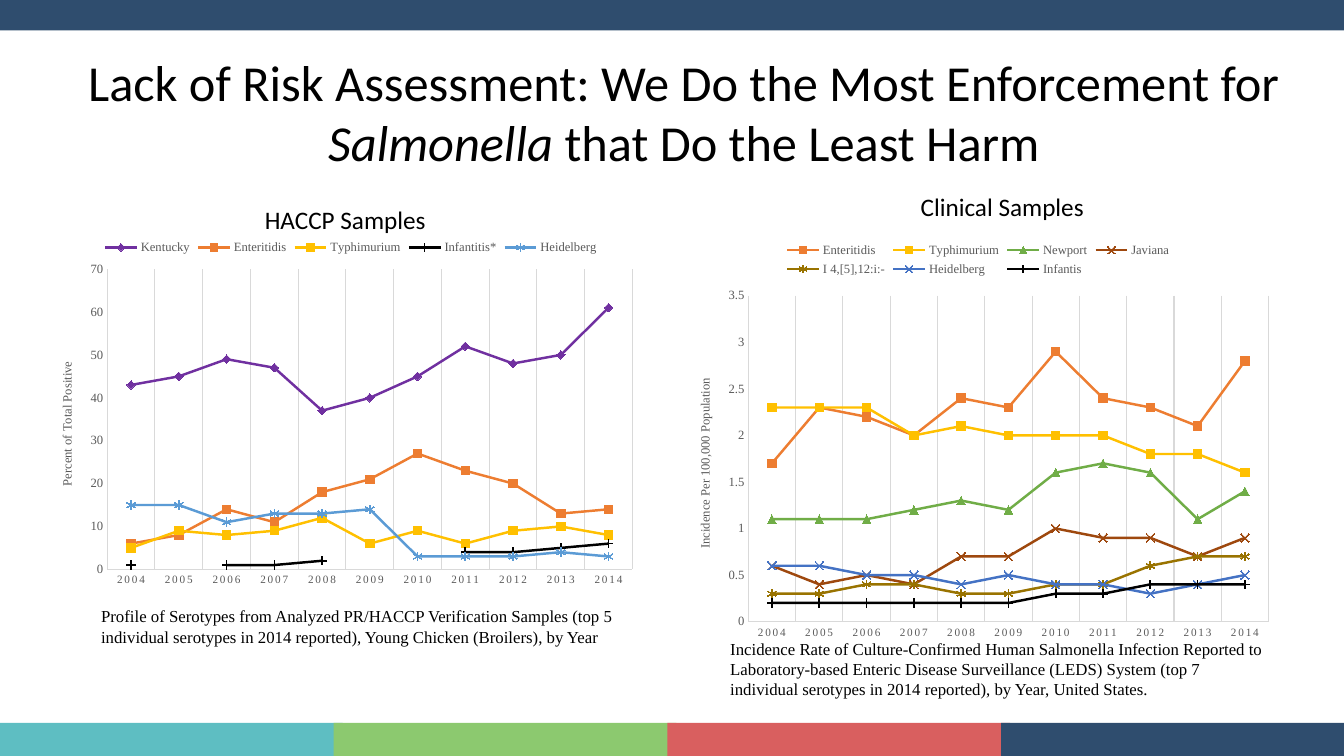
from pptx import Presentation
from pptx.chart.data import CategoryChartData
from pptx.dml.color import RGBColor
from pptx.enum.chart import XL_CHART_TYPE, XL_LEGEND_POSITION, XL_MARKER_STYLE, XL_TICK_MARK
from pptx.enum.shapes import MSO_SHAPE
from pptx.enum.text import PP_ALIGN
from pptx.oxml import parse_xml
from pptx.oxml.ns import nsdecls, qn
from pptx.util import Pt

LINE_MARKERS = XL_CHART_TYPE.LINE_MARKERS
LEGEND_TOP = XL_LEGEND_POSITION.TOP
NO_TICK = XL_TICK_MARK.NONE
RECT = MSO_SHAPE.RECTANGLE
LEFT, CENTER = PP_ALIGN.LEFT, PP_ALIGN.CENTER
DIAMOND, SQUARE = XL_MARKER_STYLE.DIAMOND, XL_MARKER_STYLE.SQUARE
TRIANGLE, CROSS = XL_MARKER_STYLE.TRIANGLE, XL_MARKER_STYLE.X
PLUS, STAR = XL_MARKER_STYLE.PLUS, XL_MARKER_STYLE.STAR
FILLED_MARKERS = (DIAMOND, SQUARE, TRIANGLE)

NAVY = RGBColor(0x2F, 0x4D, 0x6E)
TEAL = RGBColor(0x5E, 0xBE, 0xC2)
LEAF = RGBColor(0x8C, 0xC9, 0x6F)
CORAL = RGBColor(0xD9, 0x5F, 0x5F)
BLACK = RGBColor(0, 0, 0)
TEXT_GREY = RGBColor(0x59, 0x59, 0x59)
GRID_GREY = RGBColor(0xD9, 0xD9, 0xD9)
PURPLE = RGBColor(0x70, 0x30, 0xA0)
ORANGE = RGBColor(0xED, 0x7D, 0x31)
GOLD = RGBColor(0xFF, 0xC0, 0x00)
SKY = RGBColor(0x5B, 0x9B, 0xD5)
GREEN = RGBColor(0x70, 0xAD, 0x47)
BROWN = RGBColor(0x9E, 0x48, 0x0E)
OLIVE = RGBColor(0x99, 0x73, 0x00)
BLUE = RGBColor(0x44, 0x72, 0xC4)
SANS, SERIF = "Calibri", "Times New Roman"

prs = Presentation()
prs.slide_width, prs.slide_height = Pt(960), Pt(540)
s = prs.slides.add_slide(prs.slide_layouts[6])


def style_font(font, size, color, name):
    font.size, font.name, font.bold = Pt(size), name, False
    font.color.rgb = color


# Colour bands
bands = [(i * 238.4, 516.4, 244.8, 23.6, color)
         for i, color in enumerate((TEAL, LEAF, CORAL, NAVY))]
bands.append((0, 0, 960, 21.8, NAVY))
for x, y, w, h, color in bands:
    sp = s.shapes.add_shape(RECT, Pt(x), Pt(y), Pt(w), Pt(h))
    sp.shadow.inherit = False
    sp.fill.solid()
    sp.fill.fore_color.rgb = color
    sp.line.fill.background()

# Charts: box, plot area within it, value axis (title, maximum, step), series
haccp = (
    (36, 163.4, 429.1, 267.8), (40.6, 28.9, 375.2, 214.5),
    ("Percent of Total Positive", 70, 10),
    [
        ("Kentucky", PURPLE, DIAMOND, (43, 45, 49, 47, 37, 40, 45, 52, 48, 50, 61)),
        ("Enteritidis", ORANGE, SQUARE, (6, 8, 14, 11, 18, 21, 27, 23, 20, 13, 14)),
        ("Typhimurium", GOLD, SQUARE, (5, 9, 8, 9, 12, 6, 9, 6, 9, 10, 8)),
        ("Infantitis*", BLACK, PLUS, (1, None, 1, 1, 2, None, None, 4, 4, 5, 6)),
        ("Heidelberg", SKY, STAR, (15, 15, 11, 13, 13, 14, 3, 3, 3, 4, 3)),
    ],
)
clinical = (
    (483.1, 165.4, 431.3, 296.6), (51.4, 45.9, 371.7, 232.8),
    ("Incidence Per 100,000 Population", 3.5, 0.5),
    [
        ("Enteritidis", ORANGE, SQUARE,
         (1.7, 2.3, 2.2, 2.0, 2.4, 2.3, 2.9, 2.4, 2.3, 2.1, 2.8)),
        ("Typhimurium", GOLD, SQUARE,
         (2.3, 2.3, 2.3, 2.0, 2.1, 2.0, 2.0, 2.0, 1.8, 1.8, 1.6)),
        ("Newport", GREEN, TRIANGLE,
         (1.1, 1.1, 1.1, 1.2, 1.3, 1.2, 1.6, 1.7, 1.6, 1.1, 1.4)),
        ("Javiana", BROWN, CROSS,
         (0.6, 0.4, 0.5, 0.4, 0.7, 0.7, 1.0, 0.9, 0.9, 0.7, 0.9)),
        ("I 4,[5],12:i:-", OLIVE, STAR,
         (0.3, 0.3, 0.4, 0.4, 0.3, 0.3, 0.4, 0.4, 0.6, 0.7, 0.7)),
        ("Heidelberg", BLUE, CROSS,
         (0.6, 0.6, 0.5, 0.5, 0.4, 0.5, 0.4, 0.4, 0.3, 0.4, 0.5)),
        ("Infantis", BLACK, PLUS,
         (0.2, 0.2, 0.2, 0.2, 0.2, 0.2, 0.3, 0.3, 0.4, 0.4, 0.4)),
    ],
)
for box, plot_area, (axis_title, top, step), serotypes in (haccp, clinical):
    data = CategoryChartData()
    data.categories = [str(year) for year in range(2004, 2015)]
    for name, color, marker, values in serotypes:
        data.add_series(name, values)
    chart = s.shapes.add_chart(LINE_MARKERS, *map(Pt, box), data).chart
    style_font(chart.font, 10, BLACK, SANS)
    chart.has_title = False
    chart.has_legend = True
    chart.legend.position = LEGEND_TOP
    chart.legend.include_in_layout = False
    style_font(chart.legend.font, 9, TEXT_GREY, SERIF)

    cat, val = chart.category_axis, chart.value_axis
    cat.has_major_gridlines, val.has_major_gridlines = True, False
    val.minimum_scale, val.maximum_scale, val.major_unit = 0, top, step
    for axis, size in ((cat, 8), (val, 9)):
        axis.major_tick_mark = axis.minor_tick_mark = NO_TICK
        style_font(axis.tick_labels.font, size, TEXT_GREY, SERIF)
    for line in (cat.format.line, val.format.line, cat.major_gridlines.format.line):
        line.color.rgb, line.width = GRID_GREY, Pt(0.75)
    p = val.axis_title.text_frame.paragraphs[0]
    r = p.add_run()
    r.text = axis_title
    style_font(r.font, 9, TEXT_GREY, SERIF)

    # Rotated axis title, widely spaced years and a fixed plot area
    root = chart.element
    title_body = root.find(f".//{qn('c:valAx')}/{qn('c:title')}//{qn('a:bodyPr')}")
    title_body.set("rot", "-5400000")
    title_body.set("vert", "horz")
    root.find(f".//{qn('c:catAx')}/{qn('c:txPr')}//{qn('a:defRPr')}").set("spc", "120")
    plot = root.find(f".//{qn('c:plotArea')}")
    for old in plot.findall(qn("c:layout")):
        plot.remove(old)
    x, y, w, h = (part / whole for part, whole in zip(plot_area, box[2:] * 2))
    plot.insert(0, parse_xml(
        f'<c:layout {nsdecls("c")}><c:manualLayout><c:layoutTarget val="inner"/>'
        f'<c:xMode val="edge"/><c:yMode val="edge"/><c:x val="{x}"/><c:y val="{y}"/>'
        f'<c:w val="{w}"/><c:h val="{h}"/></c:manualLayout></c:layout>'))

    chart.plots[0].vary_by_categories = False
    for series, (name, color, marker, values) in zip(chart.plots[0].series, serotypes):
        series.smooth = False
        series.format.line.color.rgb = color
        series.format.line.width = Pt(1.75)
        series.marker.style, series.marker.size = marker, 6
        series.marker.format.line.color.rgb = color
        fill = series.marker.format.fill
        if marker in FILLED_MARKERS:
            fill.solid()
            fill.fore_color.rgb = color
        else:
            fill.background()

# Texts: box, size, font, alignment, runs as (text, italic)
texts = [
    ((40.4, 32.7, 896.4, 94.3), 36, SANS, CENTER,
     [("Lack of Risk Assessment: We Do the Most Enforcement for ", False),
      ("Salmonella", True), (" that Do the Least Harm", False)]),
    ((65.1, 429.4, 403.9, 36), 12, SERIF, LEFT,
     [("Profile of Serotypes from Analyzed PR/HACCP Verification Samples (top 5 "
       "individual serotypes in 2014 reported), Young Chicken (Broilers), by Year", False)]),
    ((514.5, 452.7, 401.8, 51.1), 12, SERIF, LEFT,
     [("Incidence Rate of Culture-Confirmed Human Salmonella Infection Reported to "
       "Laboratory-based Enteric Disease Surveillance (LEDS) System (top 7 individual "
       "serotypes in 2014 reported), by Year, United States.", False)]),
    ((24.1, 142.6, 445, 28.8), 18, SANS, CENTER, [("HACCP Samples", False)]),
    ((493.4, 133.2, 445, 28.8), 18, SANS, CENTER, [("Clinical Samples", False)]),
]
for box, size, font_name, align, runs in texts:
    tf = s.shapes.add_textbox(*map(Pt, box)).text_frame
    tf.word_wrap = True
    p = tf.paragraphs[0]
    p.alignment = align
    for text, italic in runs:
        r = p.add_run()
        r.text = text
        style_font(r.font, size, BLACK, font_name)
        r.font.italic = italic

prs.save("out.pptx")
